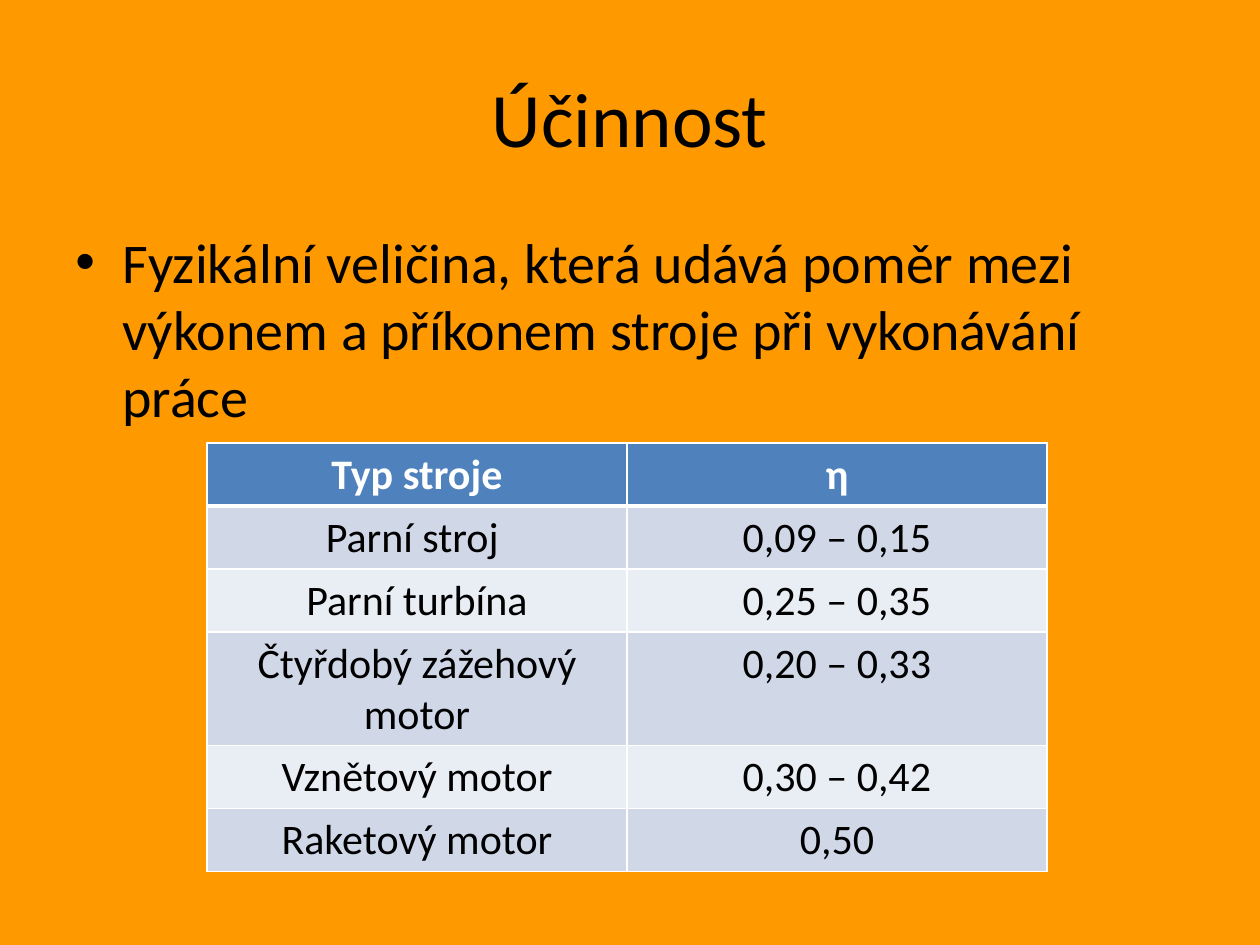
from dataclasses import dataclass

from lxml.etree import SubElement
from pptx import Presentation
from pptx.dml.color import RGBColor as Color
from pptx.enum.text import MSO_ANCHOR as Anchor, PP_ALIGN as Align
from pptx.oxml.ns import qn
from pptx.util import Emu, Pt

EMU_PER_INCH = 914400
PX_PER_INCH = 126
FONT = "Calibri"

ORANGE = Color(0xFF, 0x99, 0x00)
BLACK = Color(0x00, 0x00, 0x00)
WHITE = Color(0xFF, 0xFF, 0xFF)
HEADER_BLUE = Color(0x4F, 0x81, 0xBD)
BANDS = (Color(0xD0, 0xD8, 0xE8), Color(0xE9, 0xED, 0xF4))

THIN, THICK = 1, 3
ROW_HEIGHT = 52


@dataclass(frozen=True)
class Box:
    left: int
    top: int
    width: int
    height: int


@dataclass(frozen=True)
class Machine:
    kind: str
    efficiency: str


TITLE_BOX = Box(63, 38, 1134, 157)
BODY_BOX = Box(63, 221, 1134, 624)

HEADER = Machine("Typ stroje", "η")
MACHINES = (
    Machine("Parní stroj ", "0,09 – 0,15"),
    Machine("Parní turbína", "0,25 – 0,35"),
    Machine("Čtyřdobý zážehový motor", "0,20 – 0,33"),
    Machine("Vznětový motor", "0,30 – 0,42"),
    Machine("Raketový motor", "0,50"),
)
TABLE_BOX = Box(207, 443, 840, ROW_HEIGHT * (len(MACHINES) + 1))


def px(length: int) -> Emu:
    return Emu(round(length * EMU_PER_INCH / PX_PER_INCH))


def frame(box: Box) -> tuple[Emu, ...]:
    return px(box.left), px(box.top), px(box.width), px(box.height)


def add_span(para, text: str, size: int, color: Color = BLACK, bold: bool = False) -> None:
    span = para.add_run()
    span.text = text
    font = span.font
    font.name, font.size, font.bold = FONT, Pt(size), bold
    font.color.rgb = color


def add_bullet(para, indent: int) -> None:
    """Give the paragraph a hanging bullet and 20 % space before."""
    props = para._p.get_or_add_pPr()
    props.set("marL", str(px(indent)))
    props.set("indent", str(-px(indent)))
    before = SubElement(props, qn("a:spcBef"))
    SubElement(before, qn("a:spcPct"), val="20000")
    SubElement(props, qn("a:buFont"), typeface="Arial")
    SubElement(props, qn("a:buChar"), char="•")


def add_borders(cell, top: int, bottom: int) -> None:
    props = cell._tc.get_or_add_tcPr()
    widths = {"a:lnL": THIN, "a:lnR": THIN, "a:lnT": top, "a:lnB": bottom}
    for tag, width in widths.items():
        line = SubElement(props, qn(tag), w=str(Pt(width)))
        fill = SubElement(line, qn("a:solidFill"))
        SubElement(fill, qn("a:srgbClr"), val=str(WHITE))


def add_machine_table(slide, box: Box) -> None:
    rows = (HEADER, *MACHINES)
    table = slide.shapes.add_table(len(rows), 2, *frame(box)).table
    for index, machine in enumerate(rows):
        is_header = index == 0
        table.rows[index].height = px(ROW_HEIGHT)
        for column, text in enumerate((machine.kind, machine.efficiency)):
            cell = table.cell(index, column)
            # Borders come before the fill in the cell properties
            add_borders(cell, THICK if index == 1 else THIN, THICK if is_header else THIN)
            cell.fill.solid()
            cell.fill.fore_color.rgb = HEADER_BLUE if is_header else BANDS[(index - 1) % 2]
            para = cell.text_frame.paragraphs[0]
            para.alignment = Align.CENTER
            add_span(para, text, 24, WHITE if is_header else BLACK, is_header)


def main() -> None:
    deck = Presentation()
    deck.slide_width, deck.slide_height = px(1260), px(945)
    page = deck.slides.add_slide(deck.slide_layouts[5])
    page.background.fill.solid()
    page.background.fill.fore_color.rgb = ORANGE

    # Title
    title = page.shapes.title
    title.left, title.top, title.width, title.height = frame(TITLE_BOX)
    title.text_frame.vertical_anchor = Anchor.MIDDLE
    para = title.text_frame.paragraphs[0]
    para.alignment = Align.CENTER
    add_span(para, "Účinnost", 44)

    # Definition
    body = page.shapes.add_textbox(*frame(BODY_BOX)).text_frame
    body.word_wrap = True
    para = body.paragraphs[0]
    add_bullet(para, 47)
    add_span(
        para,
        "Fyzikální veličina, která udává poměr mezi výkonem a příkonem stroje "
        "při vykonávání práce",
        32,
    )

    # Efficiency of machines
    add_machine_table(page, TABLE_BOX)

    deck.save("out.pptx")


if __name__ == "__main__":
    main()
